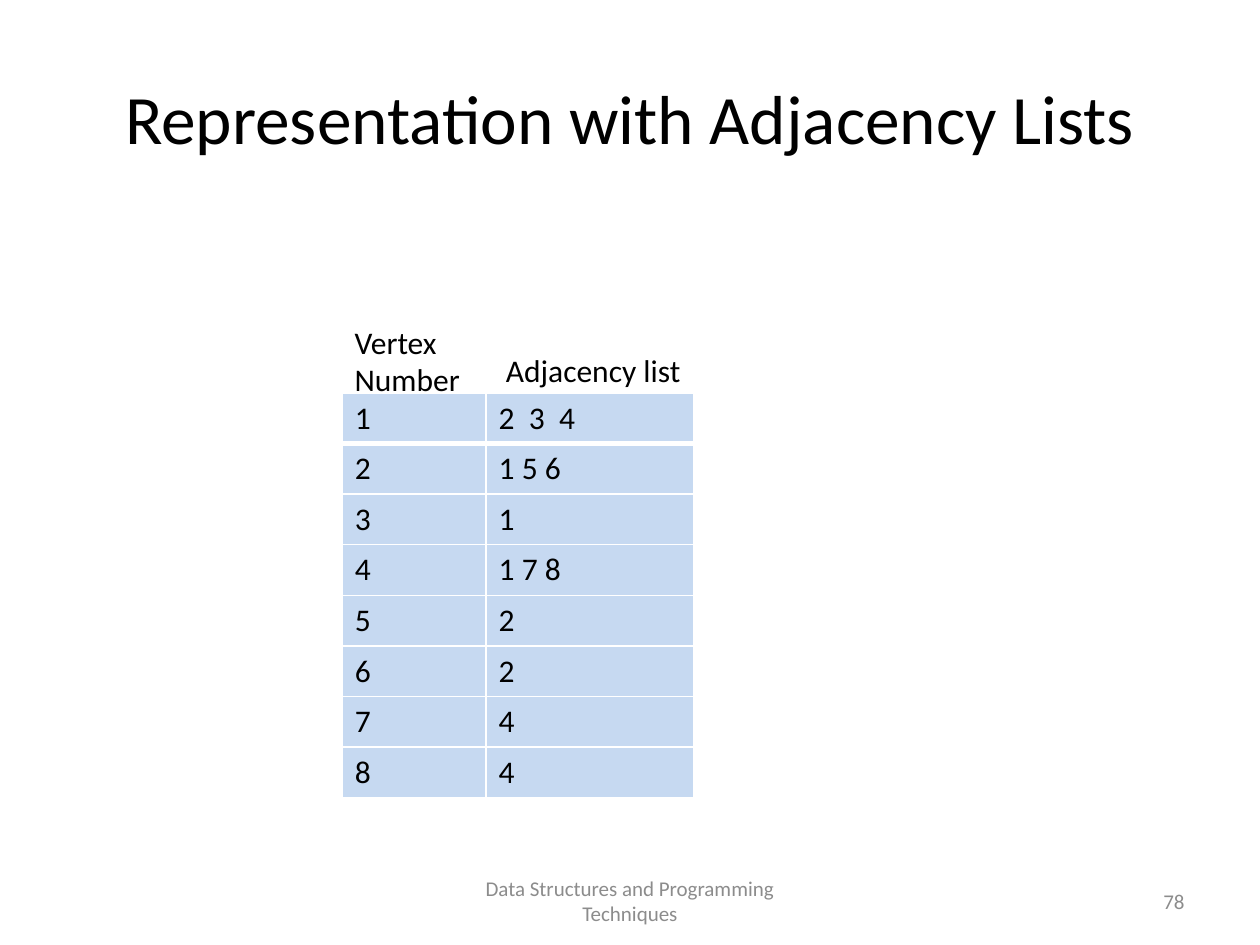
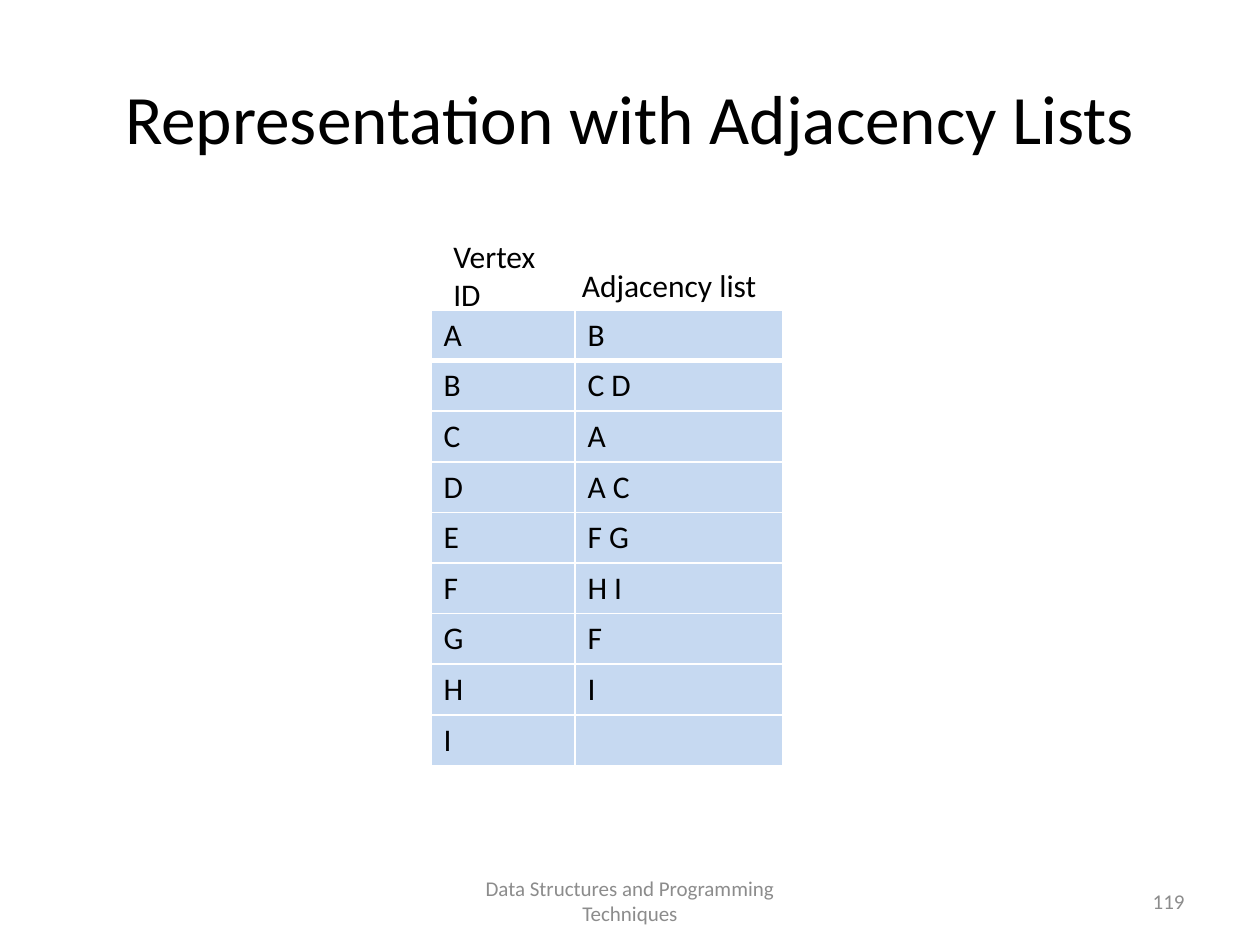
from lxml import etree
from pptx import Presentation
from pptx.dml.color import RGBColor
from pptx.enum.text import MSO_ANCHOR as Anchor, PP_ALIGN as Align
from pptx.oxml.ns import qn
from pptx.util import Cm, Pt

FONT = "Calibri"
BLACK, GREY, WHITE, PALE_BLUE = "000000", "8C8C8C", "FFFFFF", "C6D9F1"

TITLE = "Representation with Adjacency Lists"
FOOTER = "Data Structures and Programming Techniques"

# Positions are (left, top) in centimetres.
SLIDES = [
    {
        "number": 78,
        "table_at": (6.9, 7.92),
        "headings": [("Vertex Number", (6.9, 6.38)), ("Adjacency list", (9.95, 6.96))],
        "neighbours": [
            ("1", "2  3  4"), ("2", "1 5 6"), ("3", "1"), ("4", "1 7 8"),
            ("5", "2"), ("6", "2"), ("7", "4"), ("8", "4"),
        ],
    },
    {
        "number": 119,
        "table_at": (8.69, 6.25),
        "headings": [("Vertex ID", (8.89, 4.65)), ("Adjacency list", (11.48, 5.23))],
        "neighbours": [
            ("A", "B"), ("B", "C D"), ("C", "A"), ("D", "A C"), ("E", "F G"),
            ("F", "H I"), ("G", "F"), ("H", "I"), ("I", ""),
        ],
    },
]

HEADING_SIZES = [(2.79, 1.8), (4.83, 1.02)]
COLUMN_WIDTHS = [2.9, 4.19]
ROW_HEIGHT = 1.02
THIN, THICK = 1, 3


def rgb(color):
    return RGBColor.from_string(color)


def write(frame, text, size=18, color=BLACK, align=Align.LEFT, anchor=Anchor.TOP):
    frame.word_wrap = True
    frame.vertical_anchor = anchor
    paragraph = frame.paragraphs[0]
    paragraph.alignment = align
    paragraph.font.size = Pt(size)
    if text:
        run = paragraph.add_run()
        run.text = text
        run.font.name = FONT
        run.font.size = Pt(size)
        run.font.color.rgb = rgb(color)


def add_text(slide, text, left, top, width, height, **text_format):
    box = slide.shapes.add_textbox(Cm(left), Cm(top), Cm(width), Cm(height))
    write(box.text_frame, text, **text_format)


def set_borders(cell, **widths):
    """Draw white borders; widths maps L, R, T and B to points, in that order."""
    properties = cell._tc.get_or_add_tcPr()
    for position, (side, width) in enumerate(widths.items()):
        line = etree.Element(qn(f"a:ln{side}"), w=str(Pt(width)))
        fill = etree.SubElement(line, qn("a:solidFill"))
        etree.SubElement(fill, qn("a:srgbClr"), val=WHITE)
        properties.insert(position, line)


def add_neighbour_table(slide, rows, left, top):
    frame = slide.shapes.add_table(
        len(rows), len(COLUMN_WIDTHS), Cm(left), Cm(top),
        Cm(sum(COLUMN_WIDTHS)), Cm(ROW_HEIGHT * len(rows)))
    table = frame.table
    for column, width in zip(table.columns, COLUMN_WIDTHS):
        column.width = Cm(width)
    for row_index, texts in enumerate(rows):
        table.rows[row_index].height = Cm(ROW_HEIGHT)
        for column_index, text in enumerate(texts):
            cell = table.cell(row_index, column_index)
            write(cell.text_frame, text)
            cell.fill.solid()
            cell.fill.fore_color.rgb = rgb(PALE_BLUE)
            set_borders(cell, L=THIN, R=THIN,
                        T=THICK if row_index == 1 else THIN,
                        B=THICK if row_index == 0 else THIN)


def add_frame(slide, number):
    """Add the title, footer and slide number that all slides share."""
    add_text(slide, TITLE, 1.27, 0.76, 22.86, 3.18,
             size=39.6, align=Align.CENTER, anchor=Anchor.MIDDLE)
    small = {"size": 12, "color": GREY, "anchor": Anchor.MIDDLE}
    add_text(slide, FOOTER, 8.68, 17.65, 8.04, 1.02, align=Align.CENTER, **small)
    add_text(slide, str(number), 18.2, 17.65, 5.93, 1.02, align=Align.RIGHT, **small)


def main():
    presentation = Presentation()
    presentation.slide_width, presentation.slide_height = Cm(25.4), Cm(19.05)
    blank = presentation.slide_layouts[6]
    for content in SLIDES:
        slide = presentation.slides.add_slide(blank)
        add_frame(slide, content["number"])
        add_neighbour_table(slide, content["neighbours"], *content["table_at"])
        for (text, position), size in zip(content["headings"], HEADING_SIZES):
            add_text(slide, text, *position, *size)
    presentation.save("out.pptx")


if __name__ == "__main__":
    main()
